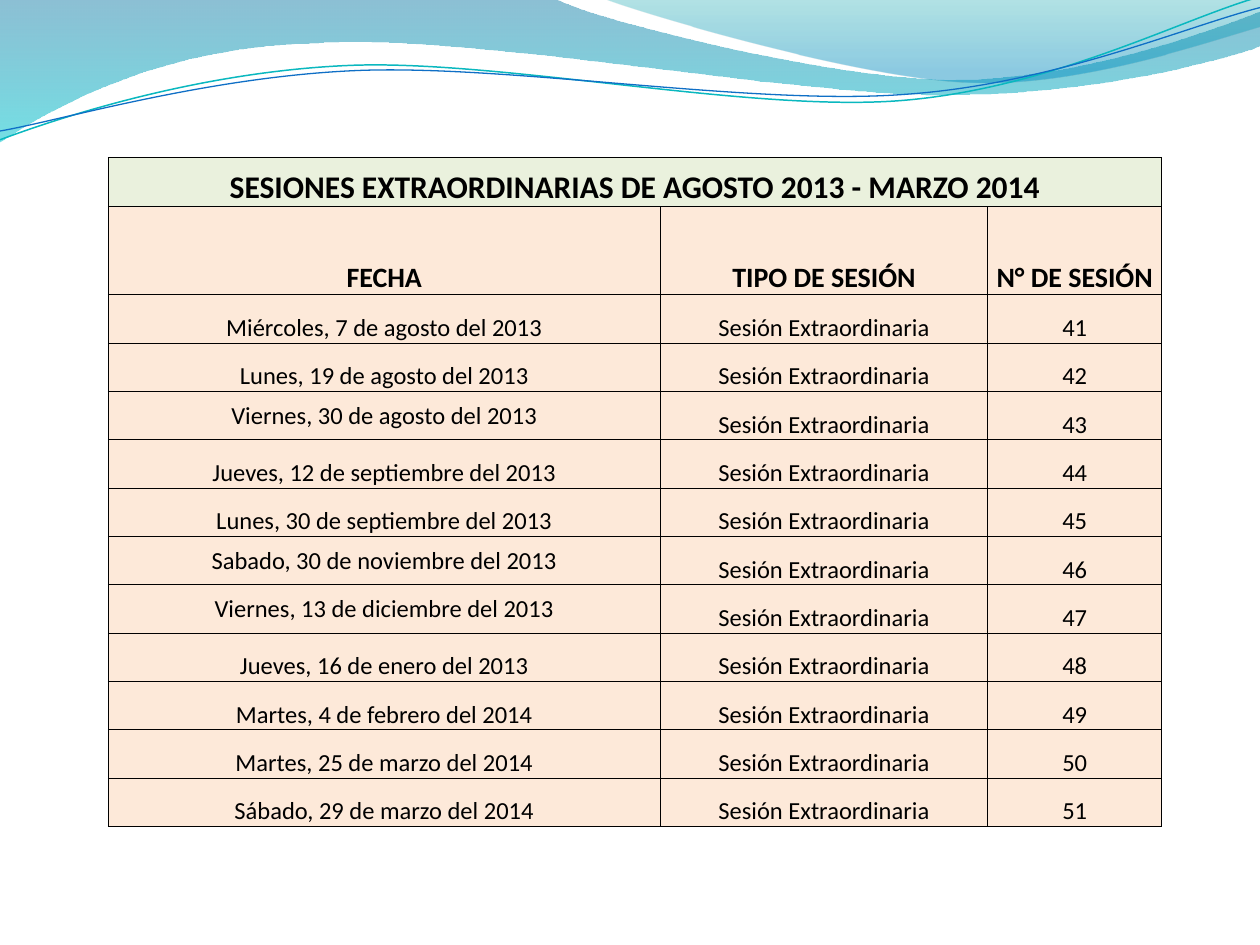
from math import cos, radians, sin

from lxml.etree import SubElement
from pptx import Presentation
from pptx.dml.color import RGBColor
from pptx.enum.text import MSO_ANCHOR, PP_ALIGN
from pptx.oxml.ns import qn
from pptx.util import Inches, Pt

TITLE = "SESIONES EXTRAORDINARIAS DE AGOSTO 2013 - MARZO 2014"
HEADERS = ["FECHA", "TIPO DE SESIÓN", "N° DE SESIÓN"]
SESSION_TYPE = "Sesión Extraordinaria"
FIRST_SESSION = 41
DATES = [
    "Miércoles, 7 de agosto del 2013",
    "Lunes, 19 de agosto del 2013",
    "Viernes, 30 de agosto del 2013",
    "Jueves, 12 de septiembre del 2013",
    "Lunes, 30 de septiembre del 2013",
    "Sabado, 30 de noviembre del 2013",
    "Viernes, 13 de diciembre del 2013",
    "Jueves, 16 de enero del 2013",
    "Martes, 4 de febrero del 2014",
    "Martes, 25 de marzo del 2014",
    "Sábado, 29 de marzo del 2014",
]
MIDDLE_SESSIONS = {43, 46, 47}

LEFT_WAVE = [
    [(0, 0)], [(4.4, -0.01)],
    [(4.76, 0.17), (6.64, 0.63), (7.58, 0.63)],
    [(8.53, 0.63), (9.58, 0.26), (10, 0.09)],
    [(10.01, 0.36)],
    [(9.83, 0.44), (8.7, 0.76), (7.46, 0.75)],
    [(6.22, 0.75), (3.82, 0.28), (2.57, 0.34)],
    [(1.29, 0.36), (0.46, 0.83), (-0.01, 1.13)],
    [(0, 0)],
]
RIGHT_WAVE = [
    [(4.79, -0.01)],
    [(5.09, 0.11), (6.82, 0.62), (7.69, 0.65)],
    [(8.56, 0.69), (9.61, 0.32), (10, 0.21)],
    [(10, 0)], [(4.79, -0.01)],
]
TEAL_LINE = [
    [(0, 1.11)],
    [(0.48, 0.93), (1.58, 0.57), (2.77, 0.52)],
    [(3.95, 0.47), (5.93, 0.89), (7.13, 0.8)],
    [(8.33, 0.71), (9.38, 0.15), (9.98, -0.02)],
]
BLUE_LINE = [
    [(0, 1.04)],
    [(0.47, 0.96), (1.64, 0.61), (2.83, 0.56)],
    [(4.03, 0.51), (5.97, 0.84), (7.17, 0.75)],
    [(8.36, 0.67), (9.41, 0.21), (10, 0.06)],
]


def color(value):
    """Return the colour for a hex string."""
    return RGBColor.from_string(value)


class SlideBuilder:
    """Hold the style and the current slide."""

    font = "Calibri"
    text_color = "000000"
    border_color = "000000"
    border_width = Pt(0.5)

    def __init__(self, slide):
        """Keep the slide to draw on."""
        self.slide = slide

    def outline(self, box, segments, close, rotation=0):
        """Add a freeform of straight and cubic segments in a rotated box."""
        left, top, width, height = box
        cosine, sine = cos(radians(-rotation)), sin(radians(-rotation))
        ends = [(Inches(x), Inches(y)) for x, y in (segment[-1] for segment in segments)]
        builder = self.slide.shapes.build_freeform(*ends[0])
        builder.add_line_segments(ends[1:], close=close)
        shape = builder.convert_to_shape()
        shape.left, shape.top, shape.width, shape.height = map(Inches, box)
        shape.rotation = rotation
        shape.shadow.inherit = False
        outline = next(shape._element.iter(qn("a:path")))
        outline.set("w", str(shape.width))
        outline.set("h", str(shape.height))
        commands = [child for child in outline if child.tag != qn("a:close")]
        for command, segment in zip(commands, segments):
            for point in list(command):
                command.remove(point)
            if len(segment) == 3:
                curve = outline.makeelement(qn("a:cubicBezTo"))
                outline.replace(command, curve)
                command = curve
            for x, y in segment:
                across, down = x - left - width / 2, y - top - height / 2
                local_x = Inches(width / 2 + across * cosine - down * sine)
                local_y = Inches(height / 2 + across * sine + down * cosine)
                SubElement(command, qn("a:pt"), x=str(local_x), y=str(local_y))
        return shape

    def wave(self, box, segments, stops):
        """Add a closed shape with a translucent downward gradient."""
        shape = self.outline(box, segments, True)
        shape.line.fill.background()
        shape.fill.gradient()
        shape.fill.gradient_angle = 270
        for stop, (position, value, _) in zip(shape.fill.gradient_stops, stops):
            stop.position = position
            stop.color.rgb = color(value)
        for element, (_, _, opacity) in zip(shape._element.iter(qn("a:srgbClr")), stops):
            SubElement(element, qn("a:alpha")).set("val", str(opacity * 1000))

    def curve(self, box, segments, value, width):
        """Add an open curved line."""
        shape = self.outline(box, segments, False, 357.3)
        shape.fill.background()
        shape.line.color.rgb = color(value)
        shape.line.width = Pt(width)

    def cell(self, cell, text, size, bold, fill, anchor=MSO_ANCHOR.BOTTOM):
        """Write and format one table cell."""
        cell.margin_left = cell.margin_right = cell.margin_top = Inches(0.01)
        cell.margin_bottom = 0
        cell.vertical_anchor = anchor
        cell.text_frame.text = text
        paragraph = cell.text_frame.paragraphs[0]
        paragraph.alignment = PP_ALIGN.CENTER
        for run in paragraph.runs:
            run.font.name = self.font
            run.font.size = Pt(size)
            run.font.bold = bold
            run.font.color.rgb = color(self.text_color)
        properties = cell._tc.get_or_add_tcPr()
        for side in ("a:lnL", "a:lnR", "a:lnT", "a:lnB"):
            line = SubElement(properties, qn(side), w=str(self.border_width))
            solid = SubElement(line, qn("a:solidFill"))
            SubElement(solid, qn("a:srgbClr"), val=self.border_color)
        cell.fill.solid()
        cell.fill.fore_color.rgb = color(fill)

    def sessions_table(self, left, top, widths, title_height, header_height, height):
        """Add the table of extraordinary sessions."""
        table = self.slide.shapes.add_table(
            len(DATES) + 2, len(widths), Inches(left), Inches(top),
            Inches(sum(widths)), Inches(height),
        ).table
        for column, width in zip(table.columns, widths):
            column.width = Inches(width)
        row_height = (height - title_height - header_height) / len(DATES)
        heights = [title_height, header_height] + [row_height] * len(DATES)
        for row, value in zip(table.rows, heights):
            row.height = Inches(value)
        table.cell(0, 0).merge(table.cell(0, len(widths) - 1))
        for column, text in enumerate([TITLE, "", ""]):
            self.cell(table.cell(0, column), text, 18, True, "EAF1DD")
        for column, text in enumerate(HEADERS):
            self.cell(table.cell(1, column), text, 16, True, "FDE9D9")
        for row, date in enumerate(DATES, 2):
            number = FIRST_SESSION + row - 2
            for column, text in enumerate([date, SESSION_TYPE, str(number)]):
                centered = column == 0 and number in MIDDLE_SESSIONS
                anchor = MSO_ANCHOR.MIDDLE if centered else MSO_ANCHOR.BOTTOM
                self.cell(table.cell(row, column), text, 14, False, "FDE9D9", anchor)


def main():
    """Build and save the presentation."""
    presentation = Presentation()
    presentation.slide_width = Inches(10)
    presentation.slide_height = Inches(7.5)
    builder = SlideBuilder(presentation.slides.add_slide(presentation.slide_layouts[6]))
    builder.wave((-0.01, -0.01, 10.02, 1.14), LEFT_WAVE,
                 [(0, "0074A1", 45), (1, "00C6CF", 55)])
    builder.wave((4.79, -0.01, 5.21, 0.7), RIGHT_WAVE,
                 [(0, "00A1A9", 30), (0.8, "008BBF", 45)])
    builder.curve((-0.02, 0.22, 10.02, 0.71), TEAL_LINE, "0AB8BF", 0.85)
    builder.curve((-0.02, 0.3, 10.03, 0.58), BLUE_LINE, "0F6FC6", 0.75)
    builder.sessions_table(0.86, 1.25, [4.38, 2.6, 1.38], 0.39, 0.7, 5.31)
    presentation.save("out.pptx")


if __name__ == "__main__":
    main()
